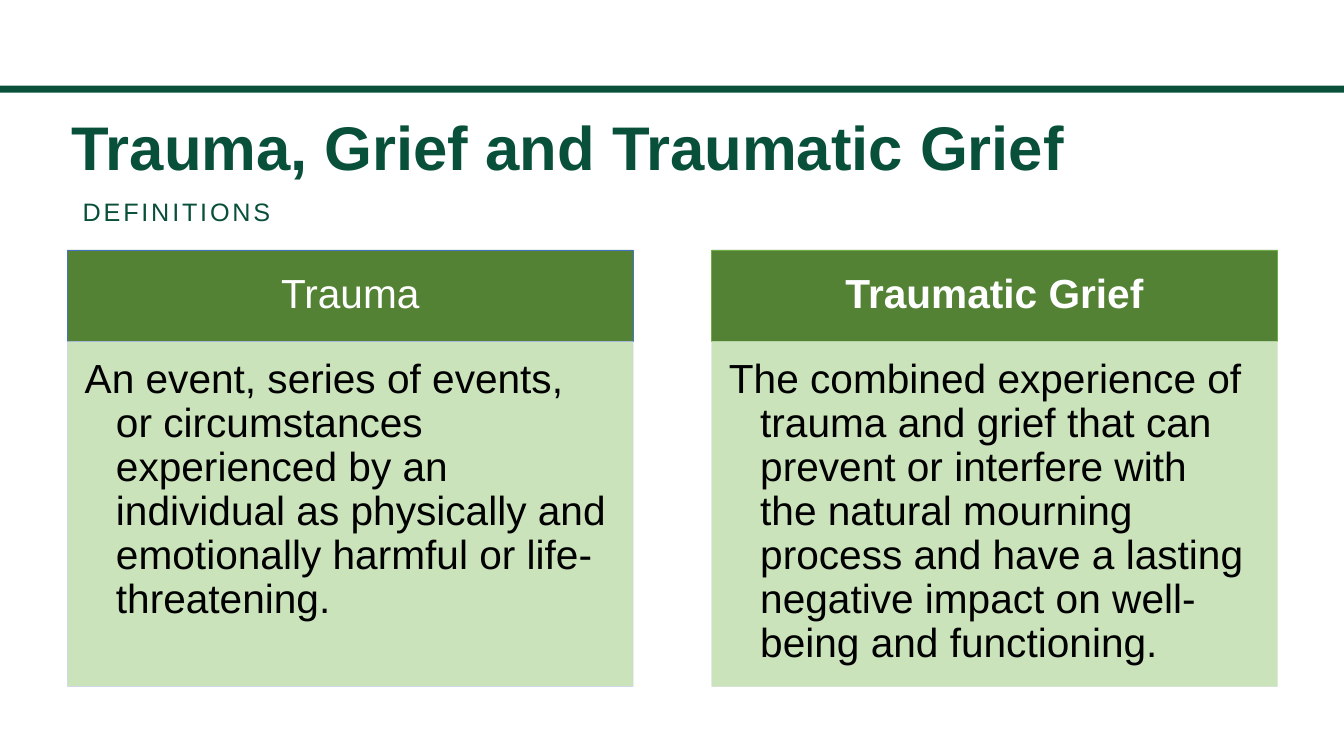
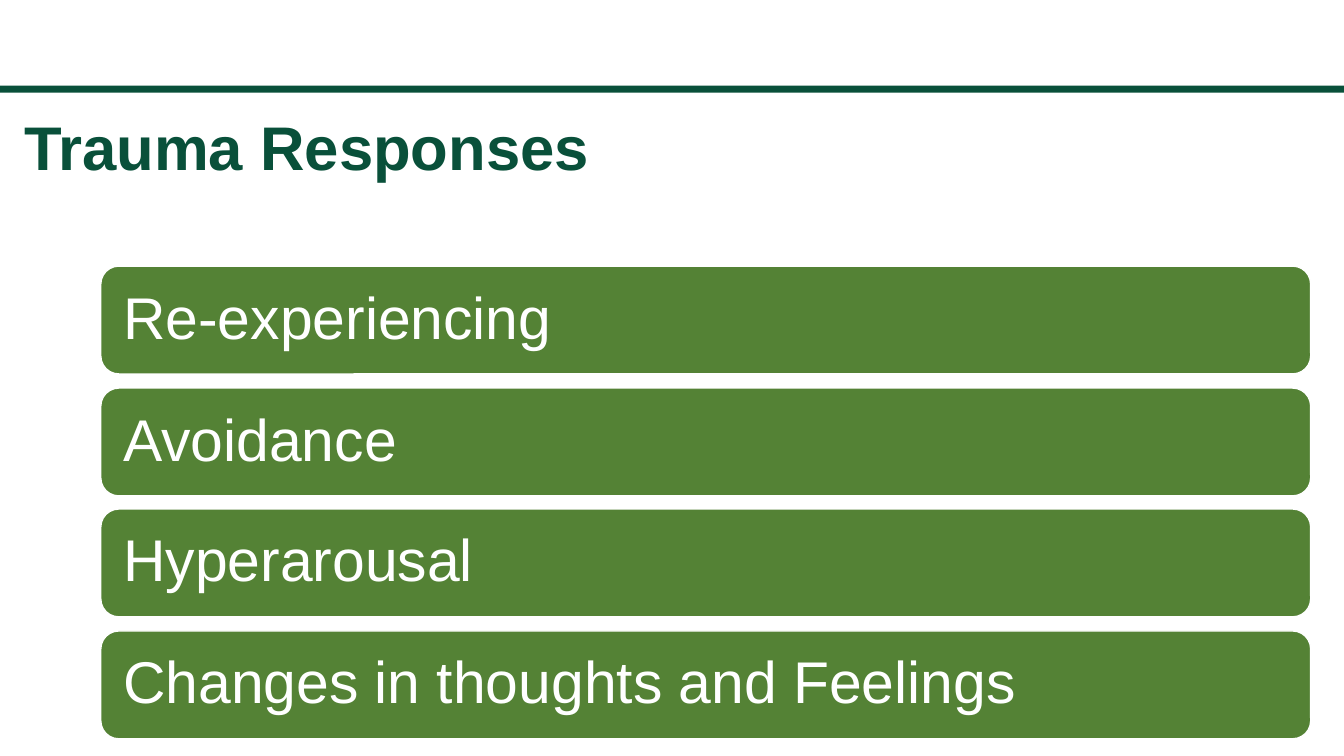
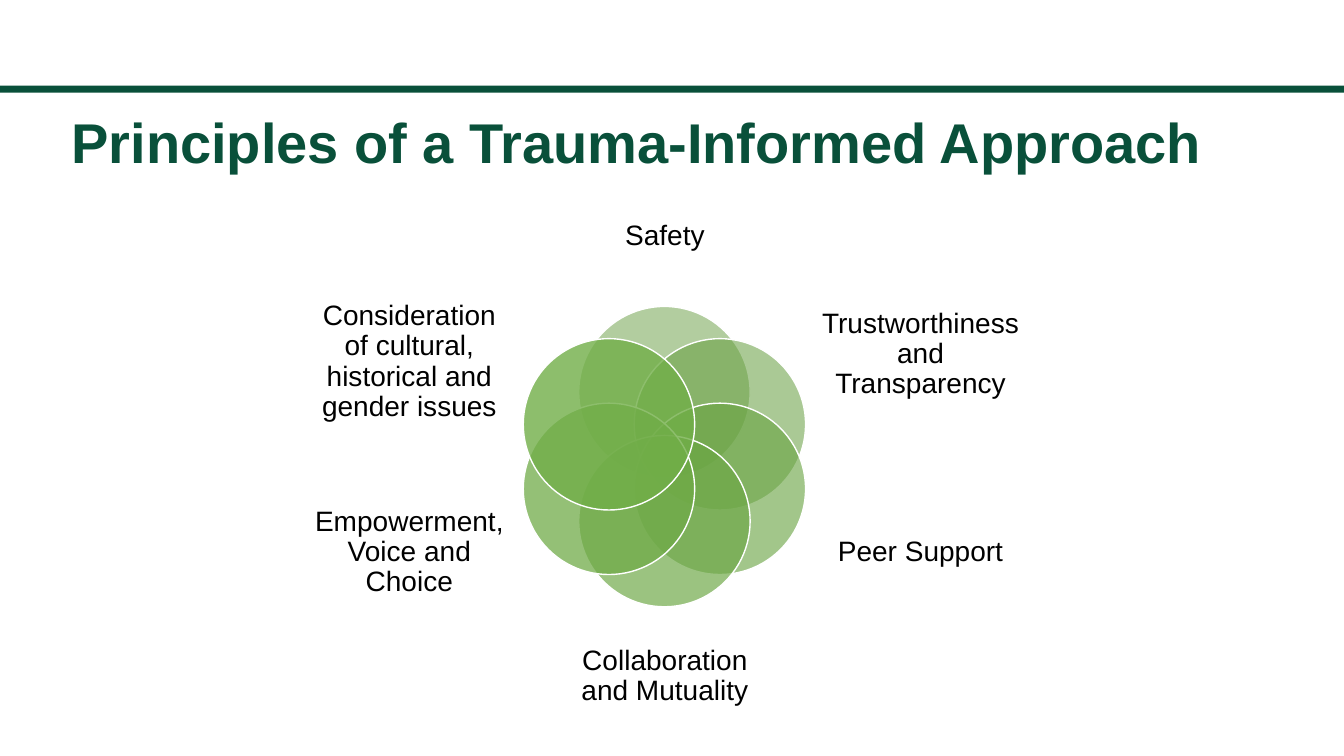
"""Build three slides on trauma, grief and trauma-informed principles."""
from dataclasses import dataclass
from math import cos, radians, sin

from lxml.etree import SubElement
from pptx import Presentation
from pptx.dml.color import RGBColor
from pptx.dml.fill import FillFormat
from pptx.enum.shapes import MSO_SHAPE
from pptx.enum.text import MSO_ANCHOR, PP_ALIGN
from pptx.oxml.ns import qn
from pptx.presentation import Presentation as Deck
from pptx.shapes.autoshape import Shape
from pptx.slide import Slide
from pptx.util import Emu, Pt

EMU_PER_PX = 9144
SLIDE_WIDTH, SLIDE_HEIGHT = 1333, 750
FONT = "Arial"
DARK_GREEN, GREEN, PALE_GREEN = "09503A", "548235", "C5E0B4"
WHITE, BLACK = "FFFFFF", "000000"
TITLE_INSETS = (4, 2, 4, 2)


@dataclass(frozen=True)
class Box:
    """Place and size in px."""

    left: int
    top: int
    width: int
    height: int

    def emu(self) -> tuple[Emu, ...]:
        """Return the four lengths in EMU."""
        return tuple(px(n) for n in (self.left, self.top, self.width, self.height))


@dataclass(frozen=True)
class Definition:
    """A term, its meaning and the look of its card."""

    term: str
    meaning: str
    header_line: str
    panel_line: str
    bold: bool = False


@dataclass(frozen=True)
class Principle:
    """A principle with its label place and petal colour."""

    label: str
    label_box: Box
    petal_colour: str


DEFINITIONS = [
    Definition(
        "Trauma",
        "An event, series of events, or circumstances experienced by an individual "
        "as physically and emotionally harmful or life-threatening.",
        "4472C4", "CFD5EA",
    ),
    Definition(
        "Traumatic Grief",
        "The combined experience of trauma and grief that can prevent or interfere "
        "with the natural mourning process and have a lasting negative impact on "
        "well-being and functioning.",
        "70AD47", "D5E3CF", bold=True,
    ),
]

RESPONSES = ["Re-experiencing", "Avoidance", "Hyperarousal", "Changes in thoughts and Feelings"]

PRINCIPLES = [
    Principle("Safety", Box(553, 177, 213, 116), "669D40"),
    Principle("Trustworthiness and Transparency", Box(812, 288, 202, 127), "68A042"),
    Principle("Peer Support", Box(812, 477, 202, 142), "6AA443"),
    Principle("Collaboration and Mutuality", Box(553, 613, 213, 116), "6CA745"),
    Principle("Empowerment, Voice and Choice", Box(305, 477, 202, 142), "6FAA47"),
    Principle(
        "Consideration of cultural, historical and gender issues",
        Box(305, 288, 202, 142), "71AE48",
    ),
]


def px(length: int) -> Emu:
    """Turn px into EMU."""
    return Emu(length * EMU_PER_PX)


def rgb(colour: str) -> RGBColor:
    """Turn a hex string into a colour."""
    return RGBColor.from_string(colour)


def paint(fill: FillFormat, colour: str, opacity: int = 100) -> None:
    """Give a fill or line one colour at an opacity in percent."""
    fill.solid()
    fill.fore_color.rgb = rgb(colour)
    if opacity < 100:
        colour_node = fill._xPr.find(qn("a:solidFill"))[0]
        SubElement(colour_node, qn("a:alpha"), val=str(opacity * 1000))


def add_block(
    slide: Slide, preset: MSO_SHAPE, box: Box, colour: str, opacity: int = 100,
    line: str | None = None, line_width: float = 1, line_opacity: int = 100,
) -> Shape:
    """Add a filled preset shape, outlined if a line colour is given."""
    block = slide.shapes.add_shape(preset, *box.emu())
    block.shadow.inherit = False
    paint(block.fill, colour, opacity)
    if line:
        paint(block.line.fill, line, line_opacity)
        block.line.width = Pt(line_width)
    else:
        block.line.fill.background()
    return block


def write(
    shape: Shape, text: str, *, size: int, colour: str = BLACK, bold: bool = False,
    align: PP_ALIGN = PP_ALIGN.LEFT, anchor: MSO_ANCHOR = MSO_ANCHOR.MIDDLE,
    insets: tuple[int, int, int, int] = (0, 0, 0, 0), hanging: int = 0, spacing: int = 0,
) -> None:
    """Write one formatted paragraph into a shape."""
    frame = shape.text_frame
    frame.word_wrap = True
    frame.vertical_anchor = anchor
    frame.margin_left, frame.margin_top, frame.margin_right, frame.margin_bottom = map(px, insets)
    paragraph = frame.paragraphs[0]
    paragraph.alignment = align
    paragraph.line_spacing = 0.9
    if hanging:
        properties = paragraph._p.get_or_add_pPr()
        properties.set("marL", str(px(hanging)))
        properties.set("indent", str(px(-hanging)))
    run = paragraph.add_run()
    run.text = text
    run.font.name = FONT
    run.font.size = Pt(size)
    run.font.bold = bold
    run.font.color.rgb = rgb(colour)
    if spacing:
        run.font._element.set("spc", str(spacing * 100))


def add_text(slide: Slide, box: Box, text: str, **text_format) -> None:
    """Add a text box with one formatted paragraph."""
    write(slide.shapes.add_textbox(*box.emu()), text, **text_format)


def start_slide(deck: Deck, title: str, left: int = 67, top: int = 114, size: int = 44) -> Slide:
    """Add a slide with the shared band and title."""
    slide = deck.slides.add_slide(deck.slide_layouts[6])
    add_block(slide, MSO_SHAPE.RECTANGLE, Box(0, 85, SLIDE_WIDTH, 7), DARK_GREEN)
    add_text(
        slide, Box(left, top, 1200, 113), title, size=size, colour=DARK_GREEN,
        bold=True, anchor=MSO_ANCHOR.TOP, insets=TITLE_INSETS,
    )
    return slide


def build_definitions(deck: Deck) -> None:
    """Build the slide of two definition cards."""
    slide = start_slide(deck, "Trauma, Grief and Traumatic Grief")
    add_text(
        slide, Box(78, 192, 1200, 35), "DEFINITIONS", size=18, colour=DARK_GREEN,
        anchor=MSO_ANCHOR.BOTTOM, insets=TITLE_INSETS, spacing=2,
    )
    for column, definition in enumerate(DEFINITIONS):
        left = 67 + column * 639
        header = add_block(
            slide, MSO_SHAPE.RECTANGLE, Box(left, 248, 561, 91), GREEN,
            line=definition.header_line, line_width=0.5,
        )
        write(
            header, definition.term, size=29, colour=WHITE, bold=definition.bold,
            align=PP_ALIGN.CENTER, insets=(23, 13, 23, 13),
        )
        panel = add_block(
            slide, MSO_SHAPE.RECTANGLE, Box(left, 339, 561, 342), PALE_GREEN, opacity=90,
            line=definition.panel_line, line_width=0.5, line_opacity=90,
        )
        write(
            panel, definition.meaning, size=29, anchor=MSO_ANCHOR.TOP,
            insets=(17, 17, 23, 25), hanging=31,
        )


def build_responses(deck: Deck) -> None:
    """Build the slide of stacked response bars."""
    slide = start_slide(deck, "Trauma Responses", left=20)
    for row, response in enumerate(RESPONSES):
        bar = add_block(
            slide, MSO_SHAPE.ROUNDED_RECTANGLE, Box(100, 264 + round(row * 120.67), 1200, 107),
            GREEN, line=WHITE,
        )
        write(bar, response, size=42, colour=WHITE, insets=(17, 17, 17, 17))


def build_principles(deck: Deck) -> None:
    """Build the slide with a ring of overlapping petals."""
    slide = start_slide(deck, "Principles of a Trauma-Informed Approach", top=112, size=40)
    centre_x, centre_y, ring_radius, diameter = 659, 453, 64, 170
    for index, principle in enumerate(PRINCIPLES):
        angle = radians(index * 360 / len(PRINCIPLES))
        petal = Box(
            round(centre_x + ring_radius * sin(angle) - diameter / 2),
            round(centre_y - ring_radius * cos(angle) - diameter / 2),
            diameter, diameter,
        )
        add_block(
            slide, MSO_SHAPE.OVAL, petal, principle.petal_colour,
            opacity=50 + 6 * index, line=WHITE,
        )
        add_text(slide, principle.label_box, principle.label, size=20, align=PP_ALIGN.CENTER)


def main() -> None:
    """Build and save the deck."""
    deck = Presentation()
    deck.slide_width, deck.slide_height = px(SLIDE_WIDTH), px(SLIDE_HEIGHT)
    build_definitions(deck)
    build_responses(deck)
    build_principles(deck)
    deck.save("out.pptx")


if __name__ == "__main__":
    main()
